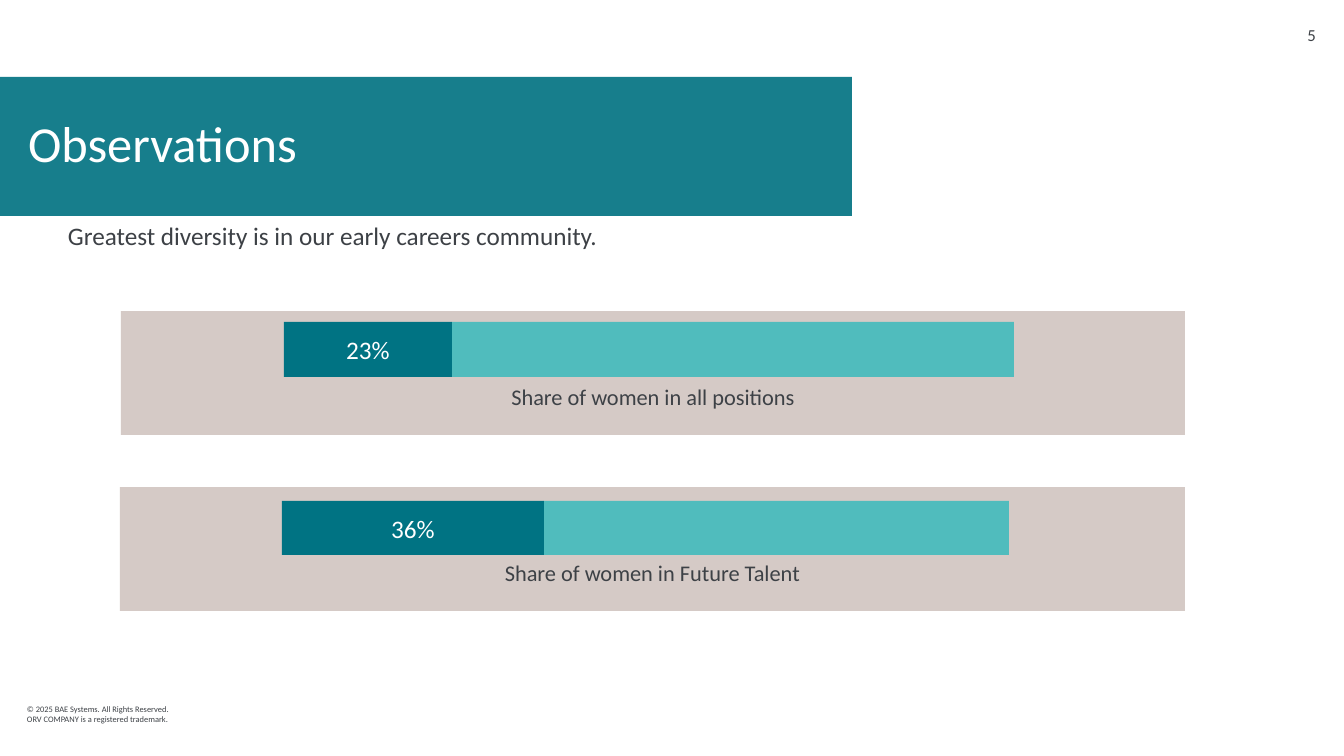
import pptx
import pptx.util
from pptx.dml.color import RGBColor
from pptx.enum.shapes import MSO_SHAPE
from pptx.enum.text import MSO_ANCHOR, PP_ALIGN

# Content
TITLE = "Observations"
PAGE_NUMBER = "5"
FINDING = "Greatest diversity is in our early careers community."
COPYRIGHT = ["© 2025 BAE Systems. All Rights Reserved.",
             "ORV COMPANY is a registered trademark."]
# Share in %, caption, panel box, bar box, caption top (px)
SHARES = [
    (23, "Share of women in all positions",
     (121, 311, 1064, 124), (284, 322, 730, 55), 384),
    (36, "Share of women in Future Talent",
     (120, 487, 1065, 124), (282, 501, 727, 54), 560),
]
CAPTION_HEIGHT = 50

# Style
FONT = "Calibri"
WHITE = RGBColor(0xFF, 0xFF, 0xFF)
GREY = RGBColor(0x3D, 0x41, 0x46)
BANNER_TEAL = RGBColor(0x17, 0x7E, 0x8C)
DARK_TEAL = RGBColor(0x00, 0x73, 0x83)
LIGHT_TEAL = RGBColor(0x50, 0xBC, 0xBD)
BEIGE = RGBColor(0xD5, 0xCA, 0xC6)
PX = 914400 / 100.8


def px(length):
    return pptx.util.Emu(round(length * PX))


def write(shape, lines, size, color=GREY, align=PP_ALIGN.LEFT,
          anchor=MSO_ANCHOR.TOP, spacing=None, left_inset=0):
    frame = shape.text_frame
    frame.word_wrap = True
    frame.vertical_anchor = anchor
    frame.margin_left = px(left_inset)
    frame.margin_right = frame.margin_top = frame.margin_bottom = 0
    frame.text = "\n".join(lines)
    for paragraph in frame.paragraphs:
        paragraph.alignment = align
        paragraph.line_spacing = spacing
        paragraph.font.name = FONT
        paragraph.font.size = pptx.util.Pt(size)
        paragraph.font.color.rgb = color


def add_text(shapes, box, lines, size, **style):
    write(shapes.add_textbox(*map(px, box)), lines, size, **style)


def add_block(shapes, box, color):
    block = shapes.add_shape(MSO_SHAPE.RECTANGLE, *map(px, box))
    block.shadow.inherit = False
    block.fill.solid()
    block.fill.fore_color.rgb = color
    block.line.fill.background()
    return block


prs = pptx.Presentation()
prs.slide_width, prs.slide_height = px(1344), px(756)
slide = prs.slides.add_slide(prs.slide_layouts[6])

# Footer, banner, page number and finding
add_text(slide.shapes, (27, 698, 180, 32), COPYRIGHT, 6, anchor=MSO_ANCHOR.MIDDLE)
banner = add_block(slide.shapes, (0, 77, 852, 139), BANNER_TEAL)
write(banner, [TITLE], 36, color=WHITE, anchor=MSO_ANCHOR.MIDDLE,
      spacing=0.9, left_inset=28)
add_text(slide.shapes, (1276, 28, 40, 14), [PAGE_NUMBER], 12,
         align=PP_ALIGN.RIGHT, anchor=MSO_ANCHOR.MIDDLE)
add_text(slide.shapes, (68, 222, 689, 90), [FINDING], 18, spacing=0.98)

# Share panels: the dark part of each bar is drawn in proportion
for share, caption, panel, bar, caption_top in SHARES:
    group = slide.shapes.add_group_shape().shapes
    add_block(group, panel, BEIGE)
    left, top, width, height = bar
    women_width = round(width * share / 100)
    add_block(group, (left + women_width, top, width - women_width, height), LIGHT_TEAL)
    women = add_block(group, (left, top, women_width, height), DARK_TEAL)
    write(women, [f"{share}%"], 18, color=WHITE, align=PP_ALIGN.CENTER,
          anchor=MSO_ANCHOR.MIDDLE)
    add_text(group, (panel[0], caption_top, panel[2], CAPTION_HEIGHT), [caption], 16,
             align=PP_ALIGN.CENTER, spacing=0.98)

prs.save("out.pptx")
